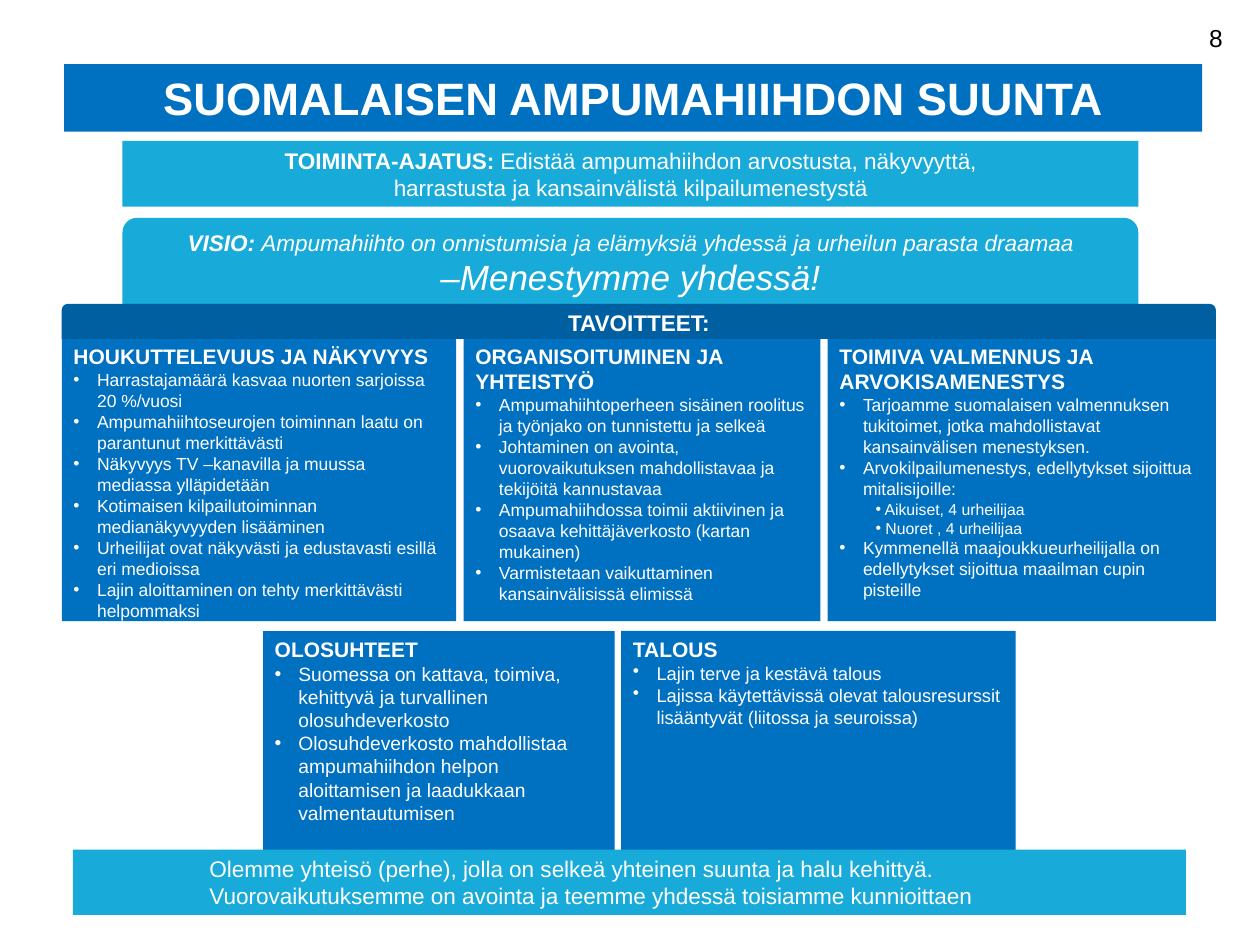
import pptx
import pptx.dml.color
import pptx.enum.shapes
import pptx.enum.text
import pptx.oxml
import pptx.util
from pptx.oxml.ns import qn

Pt = pptx.util.Pt
RGB = pptx.dml.color.RGBColor
ALIGN = pptx.enum.text.PP_ALIGN
ANCHOR = pptx.enum.text.MSO_ANCHOR
SHAPE = pptx.enum.shapes.MSO_SHAPE

WHITE = RGB(0xFF, 0xFF, 0xFF)
BLACK = RGB(0x00, 0x00, 0x00)
BLUE = RGB(0x00, 0x70, 0xC0)
DARK_BLUE = RGB(0x00, 0x5F, 0xA0)
LIGHT_BLUE = RGB(0x18, 0xAA, 0xD9)

GOALS = [
    (225.4, 10, ["HOUKUTTELEVUUS JA NÄKYVYYS"], [
        "Harrastajamäärä kasvaa nuorten sarjoissa 20 %/vuosi",
        "Ampumahiihtoseurojen toiminnan laatu on parantunut merkittävästi",
        "Näkyvyys TV –kanavilla ja muussa mediassa ylläpidetään",
        "Kotimaisen kilpailutoiminnan medianäkyvyyden lisääminen",
        "Urheilijat ovat näkyvästi ja edustavasti esillä eri medioissa",
        "Lajin aloittaminen on tehty merkittävästi helpommaksi"]),
    (203.8, 10, ["ORGANISOITUMINEN JA", "YHTEISTYÖ"], [
        "Ampumahiihtoperheen sisäinen roolitus ja työnjako on tunnistettu ja selkeä",
        "Johtaminen on avointa, vuorovaikutuksen mahdollistavaa ja tekijöitä kannustavaa",
        "Ampumahiihdossa toimii aktiivinen ja osaava kehittäjäverkosto (kartan mukainen)",
        "Varmistetaan vaikuttaminen kansainvälisissä elimissä"]),
    (221.8, 10, ["TOIMIVA VALMENNUS JA", "ARVOKISAMENESTYS"], [
        "Tarjoamme suomalaisen valmennuksen tukitoimet, jotka mahdollistavat "
        "kansainvälisen menestyksen.",
        "Arvokilpailumenestys, edellytykset sijoittua mitalisijoille:",
        ["Aikuiset, 4 urheilijaa", "Nuoret , 4 urheilijaa"],
        "Kymmenellä maajoukkueurheilijalla on edellytykset sijoittua maailman cupin pisteille"]),
]
RESOURCES = [
    (200.9, 11, ["OLOSUHTEET"], [
        "Suomessa on kattava, toimiva, kehittyvä ja turvallinen olosuhdeverkosto",
        "Olosuhdeverkosto mahdollistaa ampumahiihdon helpon aloittamisen ja laadukkaan "
        "valmentautumisen"]),
    (225.4, 10.5, ["TALOUS"], [
        "Lajin terve ja kestävä talous",
        "Lajissa käytettävissä olevat talousresurssit lisääntyvät (liitossa ja seuroissa)"]),
]


def write(tf, text, p=None, size=12.9, bold=False, italic=False, color=WHITE,
          align=ALIGN.LEFT, left=0, indent=0, bullet=False, level=0):
    """Add text as a new paragraph, or as a further run of p, and return the paragraph."""
    if p is None:
        p = tf.paragraphs[0] if not tf.paragraphs[0].runs else tf.add_paragraph()
        p.alignment, p.level = align, level
        p.space_before = p.space_after = Pt(0)
        pPr = p._p.get_or_add_pPr()
        pPr.set("marL", str(Pt(left)))
        pPr.set("indent", str(Pt(indent)))
        mark = pptx.oxml.xmlchemy.OxmlElement("a:buChar" if bullet else "a:buNone")
        if bullet:
            mark.set("char", "•")
        pPr.append(mark)
    r = p.add_run()
    r.text = text
    r.font.name, r.font.size = "Arial", Pt(size)
    r.font.bold, r.font.italic = bold, italic
    r.font.color.rgb = color
    return p


def frame(sp, box, fill=None, anchor=ANCHOR.MIDDLE, margins=(7.2, 3.6)):
    """Place and fill a shape and return its text frame."""
    sp.left, sp.top, sp.width, sp.height = (Pt(v) for v in box)
    if fill is not None:
        sp.fill.solid()
        sp.fill.fore_color.rgb = fill
    tf = sp.text_frame
    tf.word_wrap = True
    tf.auto_size = pptx.enum.text.MSO_AUTO_SIZE.NONE
    tf.vertical_anchor = anchor
    tf.margin_left = tf.margin_right = Pt(margins[0])
    tf.margin_top = tf.margin_bottom = Pt(margins[1])
    return tf


def banner(s, box, fill, kind=SHAPE.RECTANGLE):
    """Add a plain coloured band and return its text frame."""
    sp = s.shapes.add_shape(kind, *(Pt(v) for v in box))
    sp.shadow.inherit = False
    sp.line.fill.background()
    return frame(sp, box, fill, margins=(6, 3))


def card(sp, box, size, heading, items):
    """Fill one card with a heading and a bulleted list."""
    tf = frame(sp, box, BLUE, ANCHOR.TOP, (6.7, 3.4))
    for line in heading:
        write(tf, line, size=12, bold=True)
    for item in items:
        if isinstance(item, list):
            for sub in item:
                write(tf, " " + sub, size=9, left=13.5, indent=7.2, bullet=True, level=1)
        else:
            write(tf, item, size=size, left=13.5, indent=-13.5, bullet=True)


def card_row(holders, cards, left, top, height, gap):
    """Lay cards side by side with equal gaps."""
    for sp, (width, size, heading, items) in zip(holders, cards):
        card(sp, (left, top, width, height), size, heading, items)
        left += width + gap


def header(s):
    """Add the title, page number, mission and vision."""
    tf = frame(s.shapes.title, (36.7, 36.6, 650.2, 38.6), BLUE)
    write(tf, "SUOMALAISEN AMPUMAHIIHDON SUUNTA", size=25.9, bold=True, align=ALIGN.CENTER)

    tf = frame(s.shapes.add_textbox(0, 0, 0, 0), (538, 9.4, 167.8, 37.4), anchor=ANCHOR.TOP)
    write(tf, "8", size=14, color=BLACK, align=ALIGN.RIGHT)

    tf = banner(s, (70, 80.6, 580.5, 37.6), LIGHT_BLUE)
    p = write(tf, "TOIMINTA-AJATUS: ", bold=True, align=ALIGN.CENTER)
    write(tf, "Edistää ampumahiihdon arvostusta, näkyvyyttä,", p)
    write(tf, "harrastusta ja kansainvälistä kilpailumenestystä", align=ALIGN.CENTER)

    tf = banner(s, (70, 124.5, 580.5, 49.5), LIGHT_BLUE, SHAPE.ROUND_2_SAME_RECTANGLE)
    p = write(tf, "VISIO: ", bold=True, italic=True, align=ALIGN.CENTER)
    write(tf, "Ampumahiihto on onnistumisia ja elämyksiä yhdessä ja urheilun parasta draamaa",
          p, italic=True)
    write(tf, "–Menestymme yhdessä!", size=20, italic=True, align=ALIGN.CENTER)


def goals(s, holders):
    """Add the goals band and the two rows of cards."""
    tf = banner(s, (35.3, 173.7, 659.5, 20), DARK_BLUE, SHAPE.ROUND_2_SAME_RECTANGLE)
    write(tf, "TAVOITTEET:", bold=True, align=ALIGN.CENTER)
    card_row(holders[:3], GOALS, 35.3, 193, 162, 4.25)
    card_row(holders[3:], RESOURCES, 150.3, 360.6, 125.4, 3.8)


def footer(s):
    """Add the closing statement."""
    tf = banner(s, (41.7, 485.5, 636, 37.4), LIGHT_BLUE)
    for line in ("Olemme yhteisö (perhe), jolla on selkeä yhteinen suunta ja halu kehittyä.",
                 "Vuorovaikutuksemme on avointa ja teemme yhdessä toisiamme kunnioittaen"):
        write(tf, line, left=72)


def main():
    """Build and save the slide."""
    prs = pptx.Presentation()
    prs.slide_width, prs.slide_height = Pt(720), Pt(540)
    s = prs.slides.add_slide(prs.slide_layouts.get_by_name("Comparison"))
    holders = [sp for sp in s.placeholders if sp.placeholder_format.idx]
    holders.append(s.shapes.add_textbox(0, 0, 0, 0))
    header(s)
    goals(s, holders)
    footer(s)
    prs.save("out.pptx")


if __name__ == "__main__":
    main()
